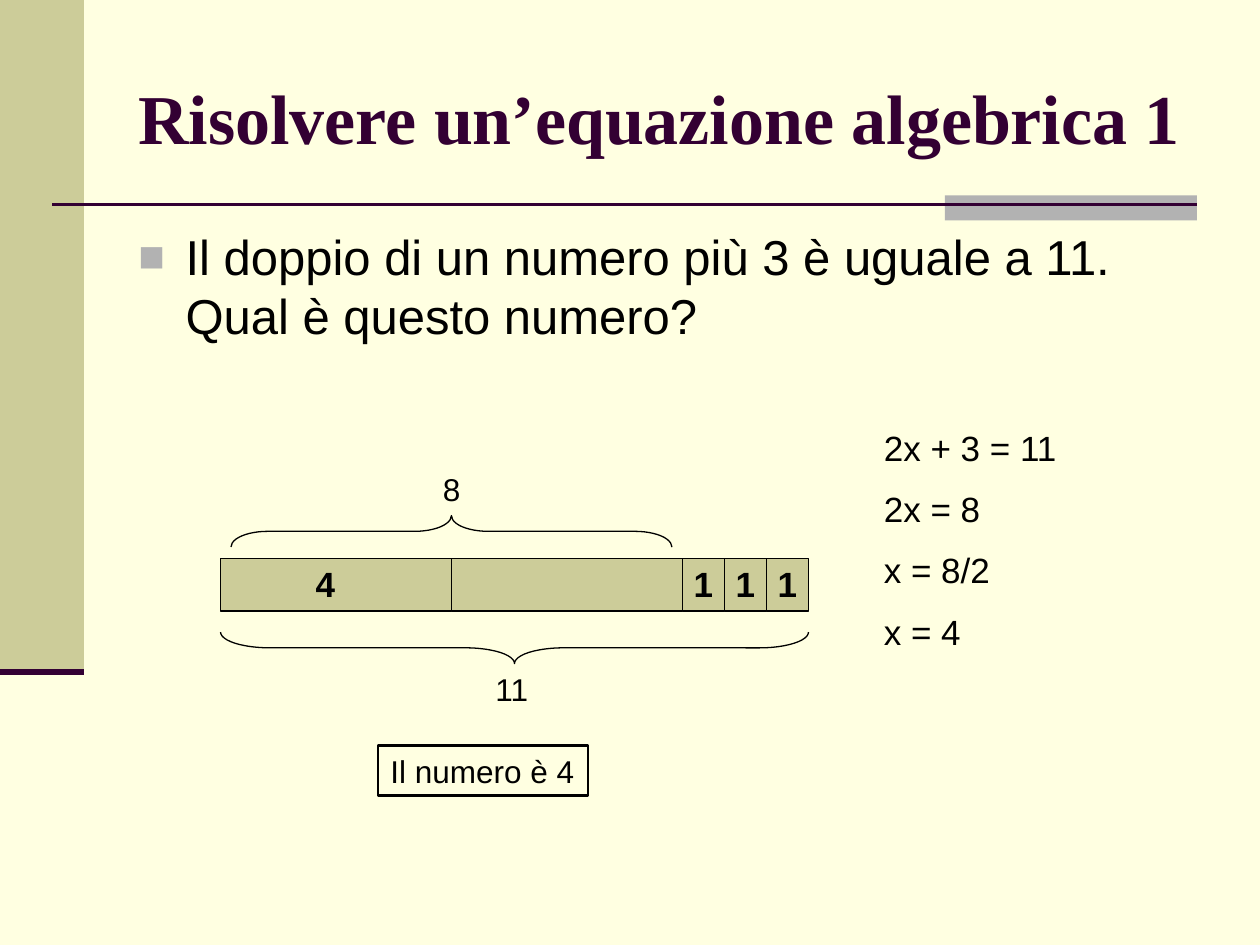
from typing import NamedTuple

from lxml.etree import SubElement
from pptx import Presentation
from pptx.dml.color import RGBColor
from pptx.enum.shapes import MSO_CONNECTOR, MSO_SHAPE
from pptx.enum.text import MSO_ANCHOR, MSO_AUTO_SIZE, PP_ALIGN
from pptx.oxml.ns import qn
from pptx.util import Pt

PX = 7620  # EMU per px, 120 px to the inch

CREAM = RGBColor(0xFF, 0xFF, 0xE1)
OLIVE = RGBColor(0xCC, 0xCC, 0x99)
GREY = RGBColor(0xB2, 0xB2, 0xB2)
PLUM = RGBColor(0x33, 0x00, 0x33)
BLACK = RGBColor(0x00, 0x00, 0x00)

BAR_LEFT, BAR_TOP, BAR_H = 210, 532, 50
UNIT_W, ONE_W = 220, 40
TAG_W = 60


class Box(NamedTuple):
    left: int
    top: int
    width: int
    height: int

    def emu(self) -> list[int]:
        return [v * PX for v in self]


class Rule(NamedTuple):
    left: int
    right: int
    y: int
    weight: float


class Brace(NamedTuple):
    mid: int
    y: int
    span: int
    turn: int
    bend: float
    label: str
    tag: Box


class Style(NamedTuple):
    size: int
    font: str = "Arial"
    color: RGBColor = BLACK
    bold: bool = False
    before: float = 0
    align: PP_ALIGN = PP_ALIGN.LEFT
    wrap: bool = True
    anchor: MSO_ANCHOR = MSO_ANCHOR.TOP
    grow: bool = True


TITLE = Style(40, "Times New Roman", PLUM, True,
              anchor=MSO_ANCHOR.MIDDLE, grow=False)
BODY = Style(28, before=5.6, grow=False)
STEP = Style(20, before=11)
DIGIT = Style(20, bold=True, before=11, align=PP_ALIGN.CENTER)
LABEL = Style(18, wrap=False)

RULES = [Rule(50, 1140, 195, 1.5), Rule(0, 80, 640, 3.5)]
BRACES = [
    Brace(490, 617, 560, 90, 1.556, "11", Box(460, 632, 58, 48)),
    Brace(430, 506, 420, 270, 1.167, "8", Box(410, 442, 41, 48)),
]
STEPS = ["2x + 3 = 11", "2x = 8", "x = 8/2", "x = 4"]


def write(shape, lines: list[str], style: Style) -> None:
    frame = shape.text_frame
    frame.word_wrap = style.wrap
    frame.vertical_anchor = style.anchor
    if style.grow:
        frame.auto_size = MSO_AUTO_SIZE.SHAPE_TO_FIT_TEXT
    frame.text = "\n".join(lines)
    for para in frame.paragraphs:
        para.alignment = style.align
        para.space_before = Pt(style.before)
        para.font.name = style.font
        para.font.size = Pt(style.size)
        para.font.bold = style.bold
        para.font.color.rgb = style.color


def add_text(slide, box: Box, lines: list[str], style: Style):
    shape = slide.shapes.add_textbox(*box.emu())
    write(shape, lines, style)
    return shape


def add_rect(slide, box: Box, fill: RGBColor | None, weight: float = 0):
    shape = slide.shapes.add_shape(MSO_SHAPE.RECTANGLE, *box.emu())
    shape.shadow.inherit = False
    if fill is None:
        shape.fill.background()
    else:
        shape.fill.solid()
        shape.fill.fore_color.rgb = fill
    if weight:
        shape.line.color.rgb = BLACK
        shape.line.width = Pt(weight)
    else:
        shape.line.fill.background()
    return shape


def add_rule(slide, rule: Rule) -> None:
    y = rule.y * PX
    line = slide.shapes.add_connector(
        MSO_CONNECTOR.STRAIGHT, rule.left * PX, y, rule.right * PX, y)
    line.line.color.rgb = PLUM
    line.line.width = Pt(rule.weight)
    SubElement(line._element.spPr, qn("a:effectLst"))


def add_brace(slide, brace: Brace) -> None:
    """Draw an upright brace turned about its centre, with its label."""
    depth = 30
    box = Box(brace.mid - depth // 2, brace.y - brace.span // 2,
              depth, brace.span)
    shape = slide.shapes.add_shape(MSO_SHAPE.RIGHT_BRACE, *box.emu())
    shape.shadow.inherit = False
    shape.rotation = brace.turn
    shape.adjustments[0] = brace.bend
    shape.fill.background()
    shape.line.color.rgb = BLACK
    shape.line.width = Pt(0.75)
    add_text(slide, brace.tag, [brace.label], LABEL)


def add_bullet(para) -> None:
    props = para._p.get_or_add_pPr()
    indent = 45 * PX
    props.set("marL", str(indent))
    props.set("indent", str(-indent))
    color = SubElement(props, qn("a:buClr"))
    SubElement(color, qn("a:srgbClr"), val=str(GREY))
    SubElement(props, qn("a:buSzPct"), val="90000")
    SubElement(props, qn("a:buFont"), typeface="Arial")
    SubElement(props, qn("a:buChar"), char="■")


def add_digit(slide, mid: int, text: str) -> None:
    box = Box(mid - TAG_W // 2, BAR_TOP - 2, TAG_W, 52)
    add_text(slide, box, [text], DIGIT)


def add_bar(slide) -> None:
    """Draw two unknown units followed by three ones."""
    for i in range(2):
        add_rect(slide, Box(BAR_LEFT + i * UNIT_W, BAR_TOP, UNIT_W, BAR_H),
                 OLIVE, 0.75)
    add_digit(slide, 310, "4")
    for i in range(3):
        left = BAR_LEFT + 2 * UNIT_W + i * ONE_W
        add_rect(slide, Box(left, BAR_TOP, ONE_W, BAR_H), OLIVE, 0.75)
        add_digit(slide, left + ONE_W // 2, "1")


def main() -> None:
    deck = Presentation()
    deck.slide_width, deck.slide_height = 1200 * PX, 900 * PX
    slide = deck.slides.add_slide(deck.slide_layouts[6])
    slide.background.fill.solid()
    slide.background.fill.fore_color.rgb = CREAM

    add_rect(slide, Box(0, 0, 80, 640), OLIVE)
    add_rect(slide, Box(900, 186, 240, 24), GREY)
    for rule in RULES:
        add_rule(slide, rule)

    add_text(slide, Box(120, 36, 1020, 150),
             ["Risolvere un’equazione algebrica 1"], TITLE)
    body = add_text(
        slide, Box(120, 210, 1020, 140),
        ["Il doppio di un numero più 3 è uguale a 11. Qual è questo numero?"],
        BODY)
    add_bullet(body.text_frame.paragraphs[0])

    add_bar(slide)
    for brace in BRACES:
        add_brace(slide, brace)
    add_text(slide, Box(830, 400, 300, 232), STEPS, STEP)
    answer = add_rect(slide, Box(360, 710, 200, 48), None, 1.5)
    write(answer, ["Il numero è 4"], LABEL)

    deck.save("out.pptx")


if __name__ == "__main__":
    main()
